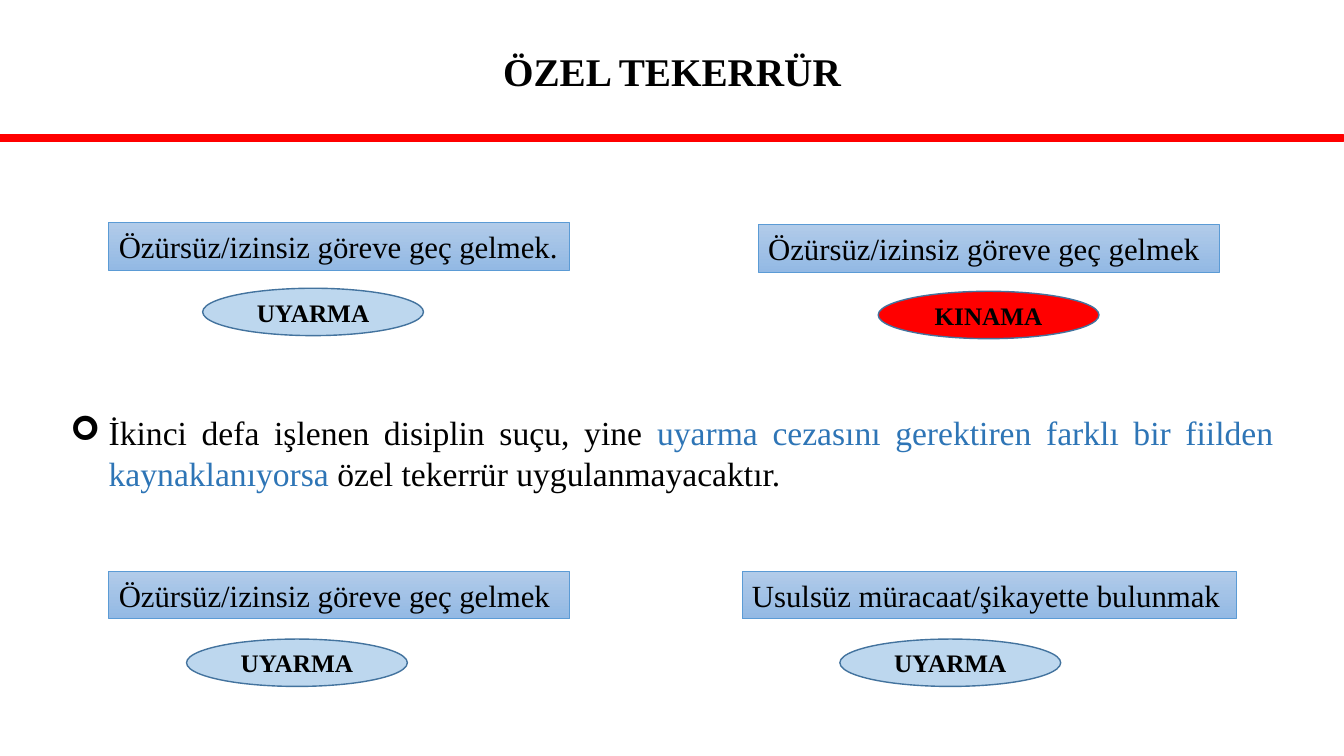
from lxml import etree
from pptx import Presentation
from pptx.dml.color import RGBColor as RGB
from pptx.enum.shapes import MSO_SHAPE as SHAPE
from pptx.enum.text import MSO_ANCHOR as ANCHOR, MSO_AUTO_SIZE as AUTO, PP_ALIGN as ALIGN
from pptx.oxml.ns import qn
from pptx.util import Inches, Pt

TITLE = "ÖZEL TEKERRÜR"
RULE = [
    ("İkinci defa işlenen disiplin suçu, yine ", "text"),
    ("uyarma cezasını gerektiren farklı bir fiilden kaynaklanıyorsa ", "accent"),
    ("özel tekerrür uygulanmayacaktır.", "text"),
]
OFFENCES = [
    ("Özürsüz/izinsiz göreve geç gelmek.", 1.08, 2.21, 4.57),
    ("Özürsüz/izinsiz göreve geç gelmek", 7.52, 2.23, 4.57),
    ("Özürsüz/izinsiz göreve geç gelmek", 1.08, 5.67, 4.57),
    ("Usulsüz müracaat/şikayette bulunmak", 7.36, 5.67, 4.9),
]
PENALTIES = [
    ("UYARMA", 2.01, 2.86, "warning"),
    ("KINAMA", 8.71, 2.89, "red"),
    ("UYARMA", 1.85, 6.34, "warning"),
    ("UYARMA", 8.33, 6.34, "warning"),
]
THEME = {
    "font": "Times New Roman",
    "sizes": {"title": 28, "rule": 24, "offence": 22, "penalty": 18},
    "colors": {
        "text": "000000", "accent": "2E75B6", "red": "FF0000",
        "warning": "BDD7EE", "penalty_line": "43739E",
        "box_top": "B1CBE9", "box_bottom": "93B9E4", "box_line": "5B9BD5",
    },
}
SLIDE_W, SLIDE_H = 13.33, 7.5
LABEL_H, PENALTY_W = 0.47, 2.19
BULLET_INDENT = 0.38


def color(name):
    return RGB.from_string(THEME["colors"][name])


def add_run(p, text, size, color_name="text", bold=False):
    r = p.add_run()
    r.text = text
    r.font.name = THEME["font"]
    r.font.size = Pt(THEME["sizes"][size])
    r.font.bold = bold
    r.font.color.rgb = color(color_name)


def add_text(slide, x, y, w, h, anchor):
    tf = slide.shapes.add_textbox(*map(Inches, (x, y, w, h))).text_frame
    tf.word_wrap = True
    tf.auto_size = AUTO.NONE
    tf.vertical_anchor = anchor
    return tf.paragraphs[0]


def add_shape(slide, kind, x, y, w, h, line, line_width, fill=None):
    sp = slide.shapes.add_shape(kind, *map(Inches, (x, y, w, h)))
    sp.shadow.inherit = False
    sp.line.color.rgb = color(line)
    sp.line.width = Pt(line_width)
    if fill:
        sp.fill.solid()
        sp.fill.fore_color.rgb = color(fill)
    else:
        sp.fill.gradient()
        sp.fill.gradient_angle = 270
        for stop, name in zip(sp.fill.gradient_stops, ("box_top", "box_bottom")):
            stop.color.rgb = color(name)
    return sp


def add_label(sp, text, size, align, anchor, bold=False):
    tf = sp.text_frame
    tf.word_wrap = True
    tf.vertical_anchor = anchor
    p = tf.paragraphs[0]
    p.alignment = align
    add_run(p, text, size, bold=bold)


def add_rule(slide):
    p = add_text(slide, 0.6, 4.04, 12.13, 0.91, ANCHOR.TOP)
    p.alignment = ALIGN.JUSTIFY
    props = p._p.get_or_add_pPr()
    props.set("marL", str(Inches(BULLET_INDENT)))
    props.set("indent", str(-Inches(BULLET_INDENT)))
    etree.SubElement(props, qn("a:buFont")).set("typeface", "Wingdings")
    etree.SubElement(props, qn("a:buChar")).set("char", "➢")
    for text, color_name in RULE:
        add_run(p, text, "rule", color_name)


def main():
    prs = Presentation()
    prs.slide_width, prs.slide_height = Inches(SLIDE_W), Inches(SLIDE_H)
    slide = prs.slides.add_slide(prs.slide_layouts[6])

    add_shape(slide, SHAPE.RECTANGLE, 0, 1.34, SLIDE_W, 0.05, "red", 2.25, "red")
    p = add_text(slide, 0, 0, SLIDE_W, 1.46, ANCHOR.MIDDLE)
    p.alignment = ALIGN.CENTER
    p.line_spacing = 0.9
    add_run(p, TITLE, "title", bold=True)
    add_rule(slide)

    for text, x, y, w in OFFENCES:
        sp = add_shape(slide, SHAPE.RECTANGLE, x, y, w, LABEL_H, "box_line", 0.5)
        add_label(sp, text, "offence", ALIGN.LEFT, ANCHOR.TOP)
    for text, x, y, fill in PENALTIES:
        sp = add_shape(slide, SHAPE.OVAL, x, y, PENALTY_W, LABEL_H, "penalty_line", 1, fill)
        add_label(sp, text, "penalty", ALIGN.CENTER, ANCHOR.MIDDLE, bold=True)

    prs.save("out.pptx")


if __name__ == "__main__":
    main()
